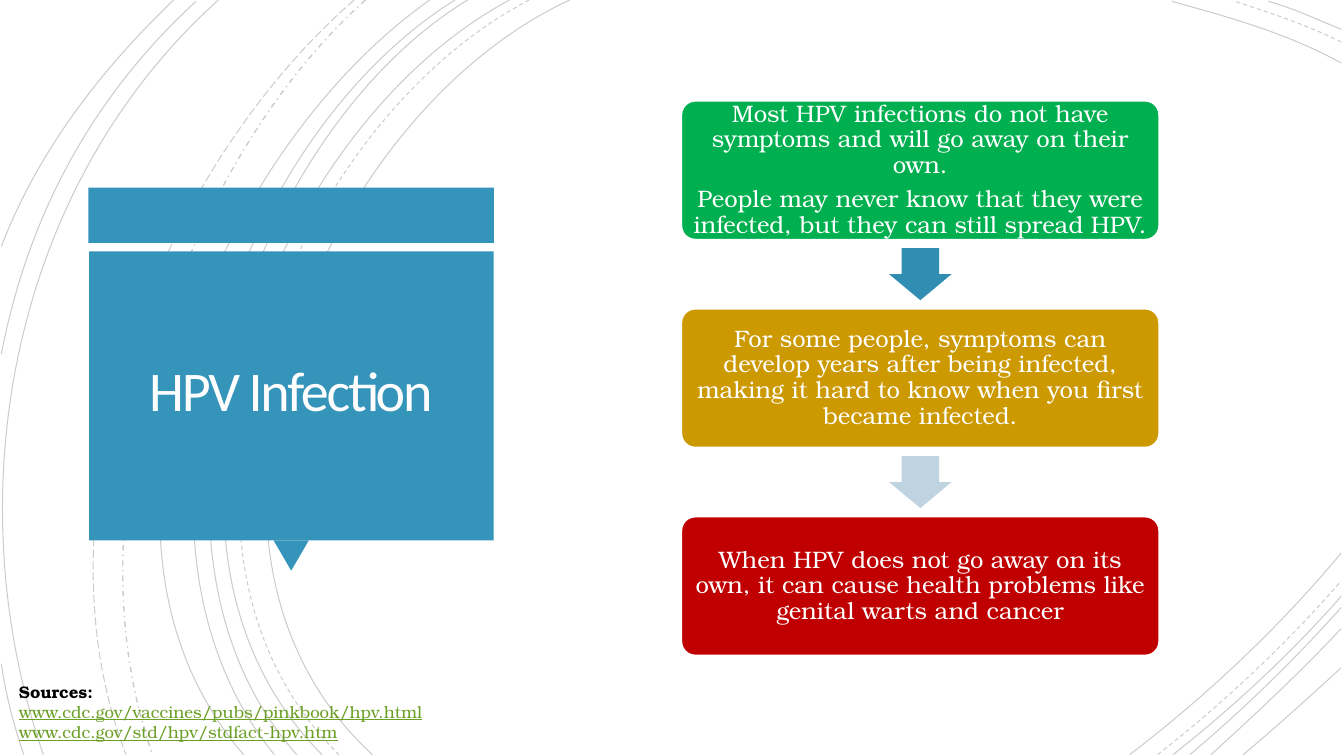
from lxml import etree
from pptx import Presentation
from pptx.dml.color import RGBColor
from pptx.enum.dml import MSO_LINE
from pptx.enum.shapes import MSO_SHAPE
from pptx.enum.text import MSO_ANCHOR, MSO_AUTO_SIZE, PP_ALIGN
from pptx.oxml.ns import qn
from pptx.util import Pt

SOLID, DASH = MSO_LINE.SOLID, MSO_LINE.DASH
LONG_DASH, DASH_DOT = MSO_LINE.LONG_DASH, MSO_LINE.DASH_DOT
RECTANGLE, TRIANGLE = MSO_SHAPE.RECTANGLE, MSO_SHAPE.ISOSCELES_TRIANGLE
ROUNDED, ARROW = MSO_SHAPE.ROUNDED_RECTANGLE, MSO_SHAPE.RIGHT_ARROW
MIDDLE = MSO_ANCHOR.MIDDLE
LEFT, CENTER = PP_ALIGN.LEFT, PP_ALIGN.CENTER
FIXED, GROW = MSO_AUTO_SIZE.NONE, MSO_AUTO_SIZE.SHAPE_TO_FIT_TEXT

BLACK = RGBColor(0x00, 0x00, 0x00)
WHITE = RGBColor(0xFF, 0xFF, 0xFF)
TITLE_WHITE = RGBColor(0xFF, 0xFE, 0xFF)
BLUE = RGBColor(0x34, 0x94, 0xBA)
ARROW_BLUE = RGBColor(0x32, 0x8D, 0xB2)
PALE_BLUE = RGBColor(0xBF, 0xD3, 0xE0)
GREEN = RGBColor(0x00, 0xB0, 0x50)
GOLD = RGBColor(0xCC, 0x99, 0x00)
RED = RGBColor(0xC0, 0x00, 0x00)
LINK_GREEN = RGBColor(0x6B, 0x9F, 0x25)

CURVES = [
    (SOLID, 0.75, [
        (407, 0, 227, 83, 103, 389, 266, 539),
        (958, 45, 920, 24, 877, 12, 837, 1),
        (807, 539, 862, 497, 914, 448, 958, 395),
        (364, 0, 194, 91, 79, 387, 230, 539),
        (958, 21, 941, 14, 924, 6, 906, 1),
        (838, 539, 881, 505, 922, 467, 958, 426),
        (334, 0, 176, 96, 79, 390, 212, 539),
        (850, 539, 888, 507, 924, 472, 958, 434),
        (325, 0, 166, 99, 70, 384, 196, 539),
        (865, 539, 897, 510, 929, 480, 958, 449),
        (307, 0, 156, 106, 38, 381, 174, 539),
        (888, 539, 912, 519, 935, 498, 958, 477),
        (156, 0, 8, 133, -33, 353, 31, 539),
        (140, 1, 66, 69, 20, 154, 1, 253),
        (1, 474, 4, 496, 10, 518, 17, 539),
        (124, 0, 72, 50, 27, 108, 1, 176),
    ]),
    (DASH, 0.75, [
        (378, 0, 205, 90, 89, 387, 242, 539),
        (958, 30, 934, 18, 907, 9, 882, 1),
        (827, 539, 873, 503, 918, 461, 958, 415),
    ]),
    (DASH_DOT, 1, [(261, 0, 127, 120, 47, 366, 109, 539)]),
    (LONG_DASH, 0.75, [(253, 0, 113, 122, 21, 359, 90, 539)]),
]

STEPS = [
    (GREEN, ARROW_BLUE, [
        "Most HPV infections do not have symptoms and will go away on their own.",
        "People may never know that they were infected, but they can still spread HPV.",
    ]),
    (GOLD, PALE_BLUE, [
        "For some people, symptoms can develop years after being infected, "
        "making it hard to know when you first became infected.",
    ]),
    (RED, None, [
        "When HPV does not go away on its own, it can cause health problems "
        "like genital warts and cancer",
    ]),
]

SOURCES = [
    ("Sources:", BLACK, True, False),
    ("www.cdc.gov/vaccines/pubs/pinkbook/hpv.html", LINK_GREEN, False, True),
    ("www.cdc.gov/std/hpv/stdfact-hpv.htm", LINK_GREEN, False, True),
]

CARD_LEFT, CARD_TOP, CARD_WIDTH, CARD_HEIGHT = 486.7, 72, 341.3, 99.2
CARD_PITCH = 148.5
ARROW_LENGTH, ARROW_WIDTH = 37.2, 44.6


class SlideBuilder:
    heading_font = "Calibri"
    body_font = "TeX Gyre Bonum"

    def __init__(self, slide):
        self.slide = slide

    def curve(self, coordinates, dash, width):
        points = [Pt(value) for value in coordinates]
        start, *others = zip(points[::2], points[1::2])
        builder = self.slide.shapes.build_freeform(*start)
        builder.add_line_segments(others, close=False)
        shape = builder.convert_to_shape()
        segments = list(shape.element.iter(qn("a:lnTo")))
        bezier = etree.SubElement(segments[0].getparent(), qn("a:cubicBezTo"))
        for segment in segments:
            bezier.append(segment[0])
            segment.getparent().remove(segment)
        shape.shadow.inherit = False
        shape.fill.background()
        shape.line.color.rgb = BLACK
        shape.line.width = Pt(width)
        shape.line.dash_style = dash
        color = next(shape.element.iter(qn("a:srgbClr")))
        etree.SubElement(color, qn("a:alpha"), val="20000")

    def block(self, kind, left, top, width, height, fill, rotation=0):
        shape = self.slide.shapes.add_shape(
            kind, Pt(left), Pt(top), Pt(width), Pt(height))
        shape.shadow.inherit = False
        shape.fill.solid()
        shape.fill.fore_color.rgb = fill
        shape.line.fill.background()
        shape.rotation = rotation
        return shape

    def frame(self, shape, inset_x, inset_y, auto_size=FIXED):
        frame = shape.text_frame
        frame.word_wrap = True
        frame.auto_size = auto_size
        frame.margin_left = frame.margin_right = Pt(inset_x)
        frame.margin_top = frame.margin_bottom = Pt(inset_y)
        return frame

    def line_of_text(self, frame, index, text, font, size, color, alignment=CENTER):
        paragraph = frame.add_paragraph() if index else frame.paragraphs[0]
        paragraph.alignment = alignment
        run = paragraph.add_run()
        run.text = text
        run.font.name = font
        run.font.size = Pt(size)
        run.font.color.rgb = color
        return paragraph, run

    def title(self, text, left, top, width, height):
        shape = self.slide.shapes.title
        shape.left, shape.top, shape.width, shape.height = map(
            Pt, (left, top, width, height))
        frame = self.frame(shape, 18, 18)
        frame.vertical_anchor = MIDDLE
        paragraph, run = self.line_of_text(
            frame, 0, text, self.heading_font, 40, TITLE_WHITE)
        paragraph.line_spacing = 0.85
        run.font.element.set("spc", "-150") if hasattr(run.font, "element") \
            else next(shape.element.iter(qn("a:rPr"))).set("spc", "-150")
        shape.element.getparent().append(shape.element)

    def card(self, top, fill, texts):
        shape = self.block(ROUNDED, CARD_LEFT, top, CARD_WIDTH, CARD_HEIGHT, fill)
        shape.adjustments[0] = 0.1
        shape.line.color.rgb = WHITE
        shape.line.width = Pt(1.25)
        frame = self.frame(shape, 5, 5)
        frame.vertical_anchor = MIDDLE
        for index, text in enumerate(texts):
            paragraph, _ = self.line_of_text(
                frame, index, text, self.body_font, 17, WHITE)
            paragraph.line_spacing = 0.9
            paragraph.space_after = Pt(6)

    def arrow(self, center_y, fill):
        left = CARD_LEFT + (CARD_WIDTH - ARROW_LENGTH) / 2
        shape = self.block(ARROW, left, center_y - ARROW_WIDTH / 2,
                           ARROW_LENGTH, ARROW_WIDTH, fill, 90)
        shape.adjustments[0] = 0.6
        shape.adjustments[1] = 0.5

    def sources(self, left, top, width, height):
        shape = self.slide.shapes.add_textbox(
            Pt(left), Pt(top), Pt(width), Pt(height))
        frame = self.frame(shape, 7.2, 3.6, GROW)
        for index, (text, color, bold, underline) in enumerate(SOURCES):
            _, run = self.line_of_text(
                frame, index, text, self.body_font, 12, color, LEFT)
            run.font.bold = bold
            run.font.underline = underline


def main():
    presentation = Presentation()
    presentation.slide_width, presentation.slide_height = Pt(960), Pt(540)
    builder = SlideBuilder(
        presentation.slides.add_slide(presentation.slide_layouts[5]))
    for dash, width, curves in CURVES:
        for coordinates in curves:
            builder.curve(coordinates, dash, width)
    builder.block(RECTANGLE, 63.2, 134, 289.5, 39.6, BLUE)
    builder.block(TRIANGLE, 195.4, 386, 25.2, 21.6, BLUE, 180)
    builder.block(RECTANGLE, 63.6, 179.5, 289, 206.5, BLUE)
    builder.title("HPV Infection", 69.8, 185, 275.8, 193.7)
    for index, (fill, arrow_fill, texts) in enumerate(STEPS):
        top = CARD_TOP + index * CARD_PITCH
        builder.card(top, fill, texts)
        if arrow_fill:
            builder.arrow(top + (CARD_HEIGHT + CARD_PITCH) / 2, arrow_fill)
    builder.sources(6.5, 483.1, 336.2, 65.5)
    presentation.save("out.pptx")


if __name__ == "__main__":
    main()
